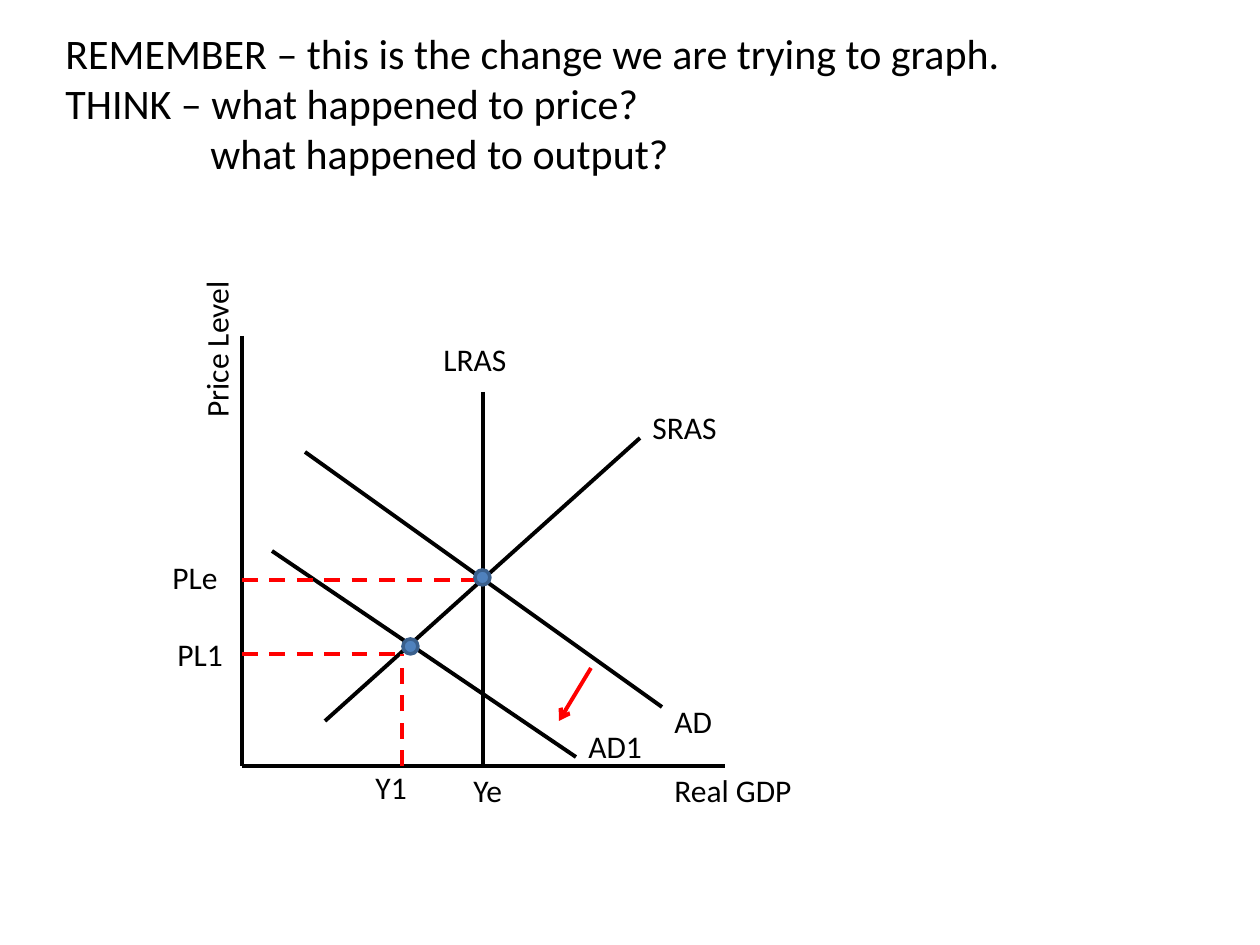
from lxml import etree
from pptx import Presentation, util as u
from pptx.dml.color import RGBColor
from pptx.enum import dml, shapes, text
from pptx.oxml import ns

PX = 914400 / 126
BLACK, RED, BLUE, DARK_BLUE = "000000", "FF0000", "4F81BD", "3A5F8C"


def px(length):
    return u.Emu(round(length * PX))


def color(value):
    return RGBColor.from_string(value)


def add_text(slide, box, lines, size):
    textbox = slide.shapes.add_textbox(*map(px, box))
    frame = textbox.text_frame
    frame.word_wrap = True
    frame.auto_size = text.MSO_AUTO_SIZE.SHAPE_TO_FIT_TEXT
    frame.text = "\n".join(lines)
    for paragraph in frame.paragraphs:
        paragraph.font.name = "Calibri"
        paragraph.font.size = u.Pt(size)
        paragraph.font.color.rgb = color(BLACK)
    return textbox


def add_line(slide, ends, stroke=BLACK, dashed=False, arrow=False):
    connector = slide.shapes.add_connector(shapes.MSO_CONNECTOR.STRAIGHT, *map(px, ends))
    connector.line.color.rgb = color(stroke)
    connector.line.width = u.Pt(2.25)
    if dashed:
        connector.line.dash_style = dml.MSO_LINE.DASH
    properties = connector._element.spPr
    if arrow:
        outline = properties.find(ns.qn("a:ln"))
        etree.SubElement(outline, ns.qn("a:tailEnd"), type="arrow")
    etree.SubElement(properties, ns.qn("a:effectLst"))


def add_equilibrium(slide, left, top):
    point = slide.shapes.add_shape(shapes.MSO_SHAPE.OVAL, px(left), px(top), px(15), px(15))
    point.shadow.inherit = False
    point.fill.solid()
    point.fill.fore_color.rgb = color(BLUE)
    point.line.color.rgb = color(DARK_BLUE)
    point.line.width = u.Pt(2)


def add_prompt(slide, box):
    prompt = add_text(slide, box, [
        "REMEMBER – this is the change we are trying to graph.",
        "THINK – what happened to price?",
        "what happened to output?",
    ], 24)
    output_question = prompt.text_frame.paragraphs[-1]
    output_question._p.get_or_add_pPr().set("marL", str(px(145)))


def add_graph(slide, left, top):
    def place(x1, y1, x2, y2):
        return left + x1, top + y1, left + x2, top + y2

    axis_x, axis_y = 102, 486
    output_e, output_1 = 343, 262
    price_e, price_1 = 300, 374

    axes = [(axis_x, 56, axis_x, axis_y), (585, axis_y, axis_x, axis_y)]
    lras = (output_e, 112, output_e, axis_y)
    ad = (165, 172, 522, 427)
    sras = (185, 441, 500, 158)
    ad1 = (132, 271, 436, 477)
    for ends in [*axes, lras, ad, sras, ad1]:
        add_line(slide, place(*ends))

    guides = [
        (axis_x, price_e, output_e, price_e),
        (axis_x, price_1, output_1, price_1),
        (output_1, axis_y, output_1, price_1),
    ]
    for ends in guides:
        add_line(slide, place(*ends), RED, dashed=True)
    add_line(slide, place(451, 388, 419, 441), RED, arrow=True)

    labels = [
        ("Real GDP", 522, 485), ("LRAS", 291, 54), ("Ye", 321, 485),
        ("PLe", 20, 272), ("AD", 522, 416), ("SRAS", 500, 122),
        ("AD1", 436, 441), ("Y1", 223, 482), ("PL1", 25, 349),
        ("Price Level", -8, 41),
    ]
    for label, x, y in labels:
        caption = add_text(slide, (left + x, top + y, 168, 50), [label], 18)
        if label == "Price Level":
            caption.rotation = 270

    for x, y in [(335, 290), (263, 359)]:
        add_equilibrium(slide, left + x, top + y)


def main():
    presentation = Presentation()
    presentation.slide_width, presentation.slide_height = px(1260), px(945)
    slide = presentation.slides.add_slide(presentation.slide_layouts[6])
    add_prompt(slide, (53, 21, 1050, 165))
    add_graph(slide, 140, 280)
    presentation.save("out.pptx")


if __name__ == "__main__":
    main()
